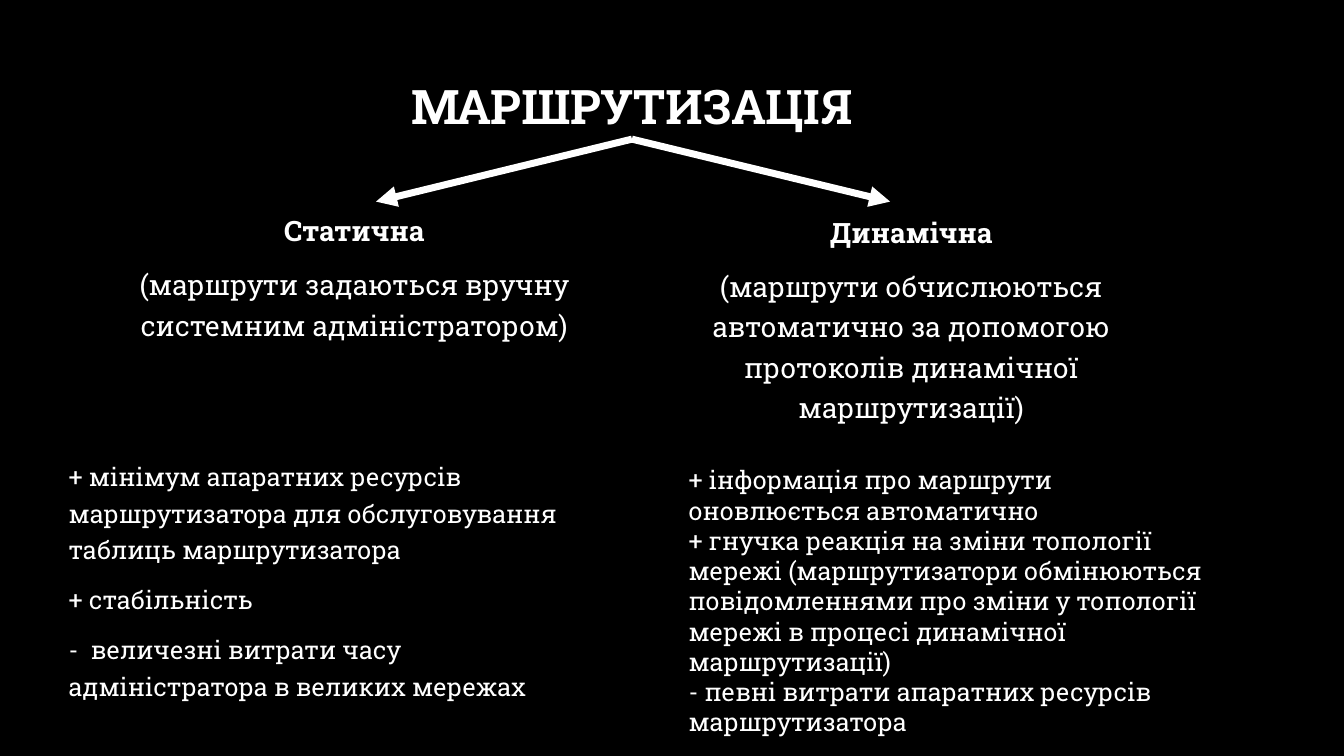
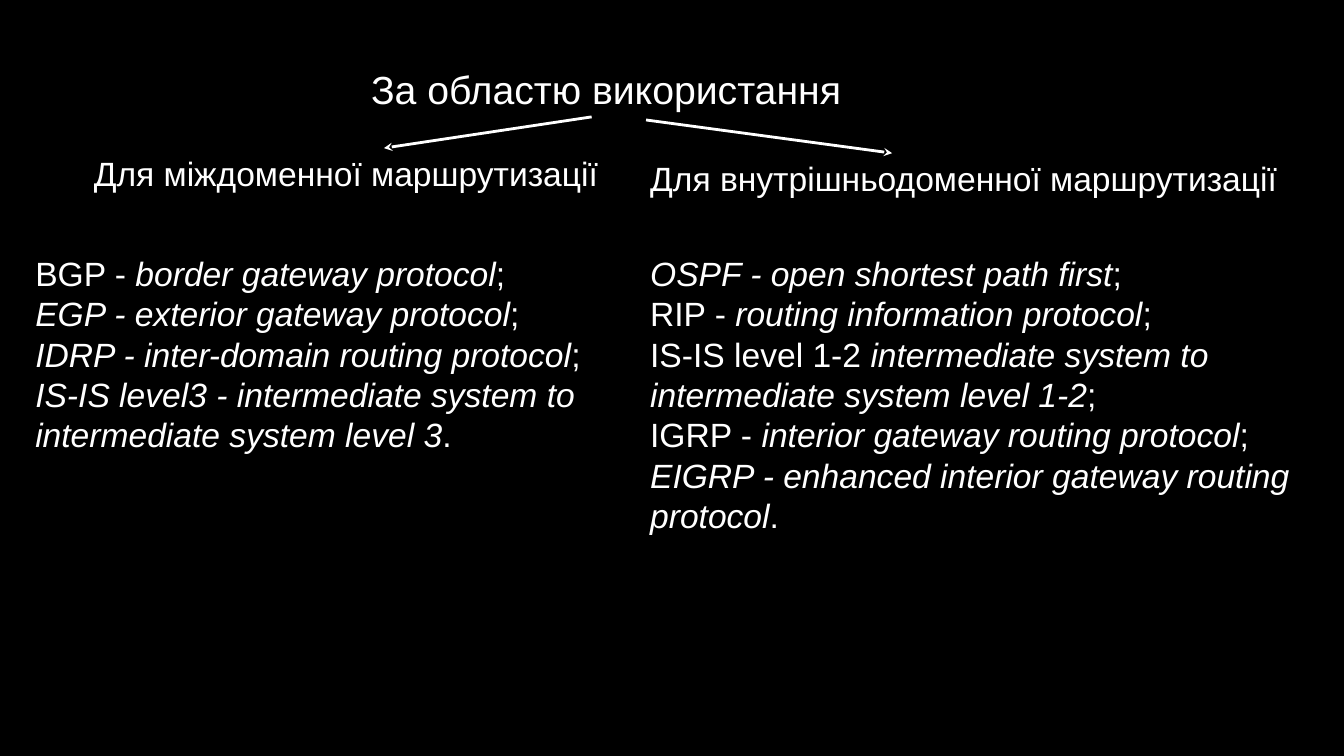
from lxml import etree
from pptx import Presentation
from pptx.dml.color import RGBColor
from pptx.enum.shapes import MSO_CONNECTOR
from pptx.enum.text import MSO_ANCHOR, MSO_AUTO_SIZE, PP_ALIGN
from pptx.oxml.ns import qn
from pptx.util import Pt

LEFT, CENTER = PP_ALIGN.LEFT, PP_ALIGN.CENTER
TOP, MIDDLE = MSO_ANCHOR.TOP, MSO_ANCHOR.MIDDLE
STRAIGHT = MSO_CONNECTOR.STRAIGHT
FIXED = MSO_AUTO_SIZE.NONE

BLACK, WHITE = "000000", "FFFFFF"
SLIDE_SIZE = (960, 540)
COMPARISON_LAYOUT = 4
TITLE, LEFT_HEADING, LEFT_LIST, RIGHT_HEADING, RIGHT_LIST = range(5)
EMPHASIS = "*"

AIRY = {"line": 1.2, "before": 10}

ROUTING_TYPES = {
    "font": "Roboto Slab",
    "emphasis": "bold",
    "arrow": {"width": 5, "head": "triangle"},
    "arrows": [((451.4, 99.4), (268.6, 144)), ((451.4, 99.4), (635.8, 144))],
    "texts": {
        TITLE: ((246.2, 55.4, 410.4, 44.6),
                {"size": 34, "align": CENTER, "line": 0.9, "anchor": MIDDLE},
                ["*МАРШРУТИЗАЦІЯ*"]),
        LEFT_HEADING: ((70.6, 144, 365, 192.2), {"size": 20, "align": CENTER, **AIRY}, [
            "*Статична*",
            "(маршрути задаються вручну системним адміністратором)",
        ]),
        RIGHT_HEADING: ((464.4, 145.4, 373, 184.3), {"size": 20, "align": CENTER, **AIRY}, [
            "*Динамічна*",
            "(маршрути обчислюються автоматично за допомогою протоколів "
            "динамічної маршрутизаці\u0457)",
        ]),
        LEFT_LIST: ((41.8, 321.8, 365, 192.2), {"size": 18, **AIRY}, [
            "+ мінімум апаратних ресурсів маршрутизатора для обслуговування "
            "таблиць маршрутизатора",
            "+ стабільність",
            "- \u00a0величезні витрати часу адміністратора в великих мережах",
        ]),
        RIGHT_LIST: ((484.6, 328.3, 396.7, 181.4), {"size": 18}, [
            "+ інформація про маршрути оновлюється автоматично",
            "+ гнучка реакція на зміни топології мережі (маршрутизатори обмінюються "
            "повідомленнями про зміни у\u00a0топології мережі\u00a0в процесі "
            "динамічної маршрутизації)",
            "- певні витрати апаратних ресурсів маршрутизатора",
        ]),
    },
}

USAGE_AREAS = {
    "font": "Arial",
    "emphasis": "italic",
    "arrow": {"width": 2, "head": "stealth"},
    "arrows": [((422.6, 83.5), (274.3, 105.8)), ((461.5, 85.7), (637.2, 109.4))],
    "texts": {
        TITLE: ((257.8, 43.2, 354.2, 41), {"size": 28, "wrap": False},
                ["За областю використання"]),
        LEFT_HEADING: ((59.8, 105.8, 378, 36), {"size": 24, "wrap": False},
                       ["Для міждоменної маршрутизації"]),
        RIGHT_HEADING: ((457.2, 109.4, 466.6, 36), {"size": 24, "wrap": False},
                        ["Для внутрішньодоменної маршрутизації"]),
        LEFT_LIST: ((18, 177.1, 480.2, 152.6), {"size": 24}, [
            "BGP -\u00a0*border gateway protocol*;",
            "*EGP - exterior gateway protocol*;",
            "*IDRP - inter-domain routing protocol*;",
            "*IS-IS level3 - intermediate system to intermediate system level 3*.",
        ]),
        RIGHT_LIST: ((457.2, 177.1, 480.2, 211), {"size": 24}, [
            "*OSPF - open shortest path first*;",
            "RIP -\u00a0*routing information protocol*;",
            "IS-IS level 1-2\u00a0*intermediate system to intermediate system "
            "level 1\u20112*;",
            "IGRP -\u00a0*interior gateway routing protocol*;",
            "*EIGRP - enhanced interior gateway routing protocol*.",
        ]),
    },
}


def color(value):
    return RGBColor.from_string(value)


def remove_bullet(paragraph):
    properties = paragraph._p.get_or_add_pPr()
    properties.set("marL", "0")
    properties.set("indent", "0")
    etree.SubElement(properties, qn("a:buNone"))


def write_paragraph(paragraph, text, content, size, align=LEFT, line=1.0, before=0):
    paragraph.alignment = align
    paragraph.line_spacing = line
    paragraph.space_before = Pt(before)
    remove_bullet(paragraph)
    for index, part in enumerate(text.split(EMPHASIS)):
        if part:
            run = paragraph.add_run()
            run.text = part
            run.font.name = content["font"]
            run.font.size = Pt(size)
            run.font.color.rgb = color(WHITE)
            run.font.bold = run.font.italic = False
            setattr(run.font, content["emphasis"], index % 2 == 1)


def fill_placeholder(shape, box, lines, content, wrap=True, anchor=TOP, **style):
    shape.left, shape.top, shape.width, shape.height = map(Pt, box)
    frame = shape.text_frame
    frame.auto_size = FIXED
    frame.word_wrap = wrap
    frame.vertical_anchor = anchor
    for index, text in enumerate(lines):
        paragraph = frame.add_paragraph() if index else frame.paragraphs[0]
        write_paragraph(paragraph, text, content, **style)


def add_arrow(slide, start, end, width, head):
    connector = slide.shapes.add_connector(STRAIGHT, *map(Pt, start + end))
    connector.line.width = Pt(width)
    connector.line.color.rgb = color(WHITE)
    properties = connector.element.spPr
    etree.SubElement(properties.find(qn("a:ln")), qn("a:tailEnd"), type=head)
    etree.SubElement(properties, qn("a:effectLst"))


def add_comparison(presentation, content):
    slide = presentation.slides.add_slide(presentation.slide_layouts[COMPARISON_LAYOUT])
    for position, (box, style, lines) in content["texts"].items():
        fill_placeholder(slide.placeholders[position], box, lines, content, **style)
    for start, end in content["arrows"]:
        add_arrow(slide, start, end, **content["arrow"])


presentation = Presentation()
presentation.slide_width, presentation.slide_height = map(Pt, SLIDE_SIZE)
background = presentation.slide_master.background.fill
background.solid()
background.fore_color.rgb = color(BLACK)
for content in (ROUTING_TYPES, USAGE_AREAS):
    add_comparison(presentation, content)
presentation.save("out.pptx")
